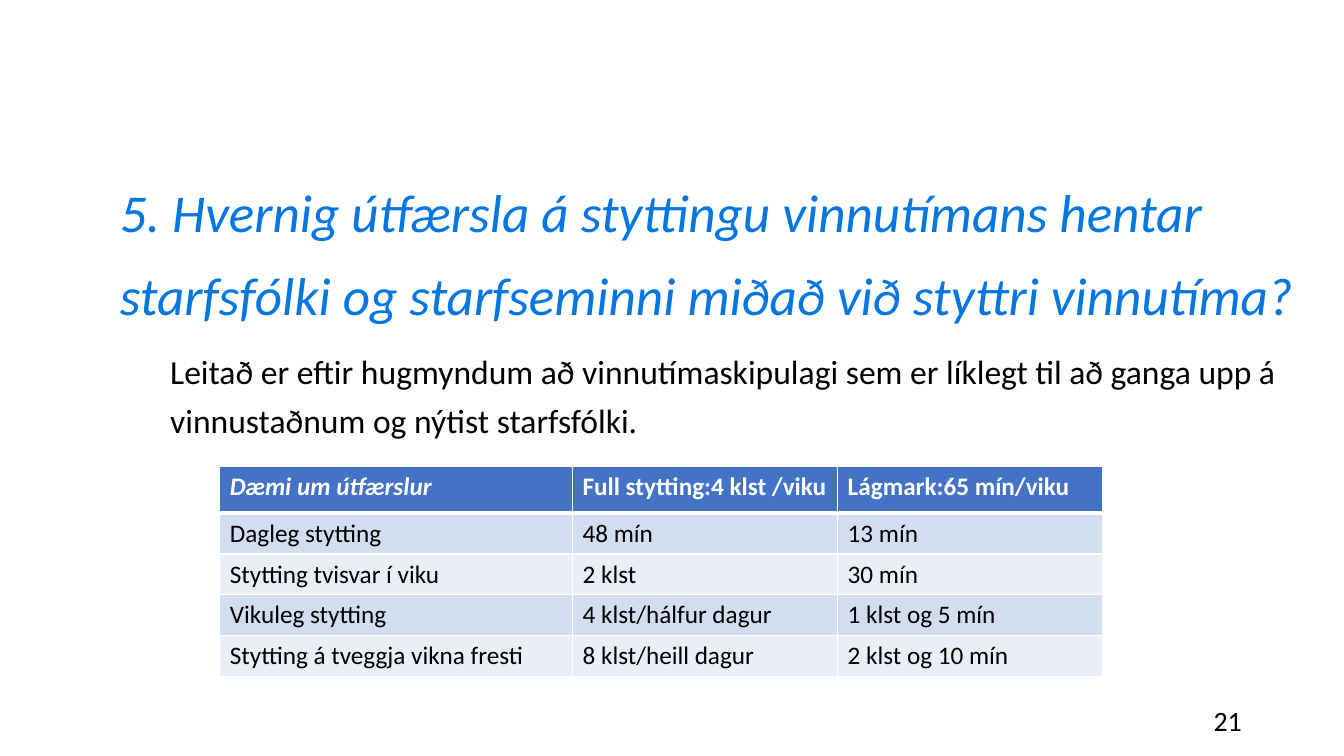
from typing import Any, NamedTuple

from lxml.etree import SubElement
from pptx import Presentation
from pptx.dml.color import RGBColor as Rgb
from pptx.enum.text import MSO_ANCHOR as Anchor, PP_ALIGN as Align
from pptx.oxml.ns import qn
from pptx.util import Cm, Pt

WHITE = Rgb(0xFF, 0xFF, 0xFF)
BLACK = Rgb(0x00, 0x00, 0x00)
BLUE = Rgb(0x03, 0x76, 0xE1)
HEAD = Rgb(0x44, 0x72, 0xC4)
BANDS = Rgb(0xEA, 0xEF, 0xF7), Rgb(0xD2, 0xDE, 0xEF)


class Box(NamedTuple):
    left: float
    top: float
    width: float
    height: float


class Para(NamedTuple):
    text: str
    font: dict[str, Any]
    form: dict[str, Any]
    indent: float = 0


QUESTION = Para(
    "5. Hvernig útfærsla á styttingu vinnutímans hentar starfsfólki "
    "og starfseminni miðað við styttri vinnutíma?",
    {"size": Pt(38), "italic": True, "color": BLUE},
    {"line_spacing": 1.3},
)
ANSWER = Para(
    "Leitað er eftir hugmyndum að vinnutímaskipulagi sem er líklegt til "
    "að ganga upp á vinnustaðnum og nýtist starfsfólki.",
    {"size": Pt(24), "color": BLACK},
    {"line_spacing": 1.2, "space_before": Pt(12)},
    indent=1.27,
)
NUMBER = Para("21", {"size": Pt(20), "color": BLACK}, {"alignment": Align.RIGHT})

ROWS = [
    ("Dæmi um útfærslur", "Full stytting:4 klst /viku", "Lágmark:65 mín/viku"),
    ("Dagleg stytting", "48 mín", "13 mín"),
    ("Stytting tvisvar í viku", "2 klst", "30 mín"),
    ("Vikuleg stytting", "4 klst/hálfur dagur", "1 klst og 5 mín"),
    ("Stytting á tveggja vikna fresti", "8 klst/heill dagur", "2 klst og 10 mín"),
]
WIDTHS = 8.89, 6.68, 6.68
HEIGHTS = 1.17, 1.03, 1.03, 1.03, 1.03
THICK = {(0, "B"), (1, "T")}


def style(item: Any, values: dict[str, Any]) -> None:
    """Set each named value; a colour goes to the item's colour format."""
    for name, value in values.items():
        if name == "color":
            item.color.rgb = value
        else:
            setattr(item, name, value)


def write(para: Any, data: Para) -> None:
    if data.indent:
        props = para._p.get_or_add_pPr()
        props.set("marL", str(Cm(data.indent)))
        props.set("indent", "0")
    style(para, data.form)
    run = para.add_run()
    run.text = data.text
    style(run.font, {"name": "Calibri", **data.font})


def add_text(slide: Any, box: Box, paras: list[Para], frame: dict[str, Any]) -> None:
    body = slide.shapes.add_textbox(*map(Cm, box)).text_frame
    style(body, {"word_wrap": True, **frame})
    for i, data in enumerate(paras):
        write(body.add_paragraph() if i else body.paragraphs[0], data)


def add_edges(cell: Any, row: int) -> None:
    props = cell._tc.get_or_add_tcPr()
    for side in "LRTB":
        width = Pt(3 if (row, side) in THICK else 1)
        line = SubElement(props, qn(f"a:ln{side}"), w=str(width))
        fill = SubElement(line, qn("a:solidFill"))
        SubElement(fill, qn("a:srgbClr"), val=str(WHITE))


def add_grid(slide: Any, left: float, top: float) -> None:
    box = Box(left, top, sum(WIDTHS), sum(HEIGHTS))
    table = slide.shapes.add_table(len(ROWS), len(WIDTHS), *map(Cm, box)).table
    for col, width in zip(table.columns, WIDTHS):
        col.width = Cm(width)
    for r, texts in enumerate(ROWS):
        table.rows[r].height = Cm(HEIGHTS[r])
        for c, text in enumerate(texts):
            cell = table.cell(r, c)
            add_edges(cell, r)
            cell.fill.solid()
            cell.fill.fore_color.rgb = BANDS[r % 2] if r else HEAD
            font = {
                "size": Pt(18),
                "bold": r == 0,
                "italic": r == c == 0,
                "color": BLACK if r else WHITE,
            }
            write(cell.text_frame.paragraphs[0], Para(text, font, {}))


def main() -> None:
    deck = Presentation()
    deck.slide_width, deck.slide_height = Cm(33.87), Cm(19.05)
    slide = deck.slides.add_slide(deck.slide_layouts[6])
    add_text(slide, Box(2.77, 0.46, 30.23, 12.27), [QUESTION, ANSWER],
             {"margin_top": Cm(3.58)})
    add_grid(slide, 5.54, 11.76)
    add_text(slide, Box(23.93, 17.65, 7.62, 1.02), [NUMBER],
             {"vertical_anchor": Anchor.MIDDLE})
    deck.save("out.pptx")


if __name__ == "__main__":
    main()
